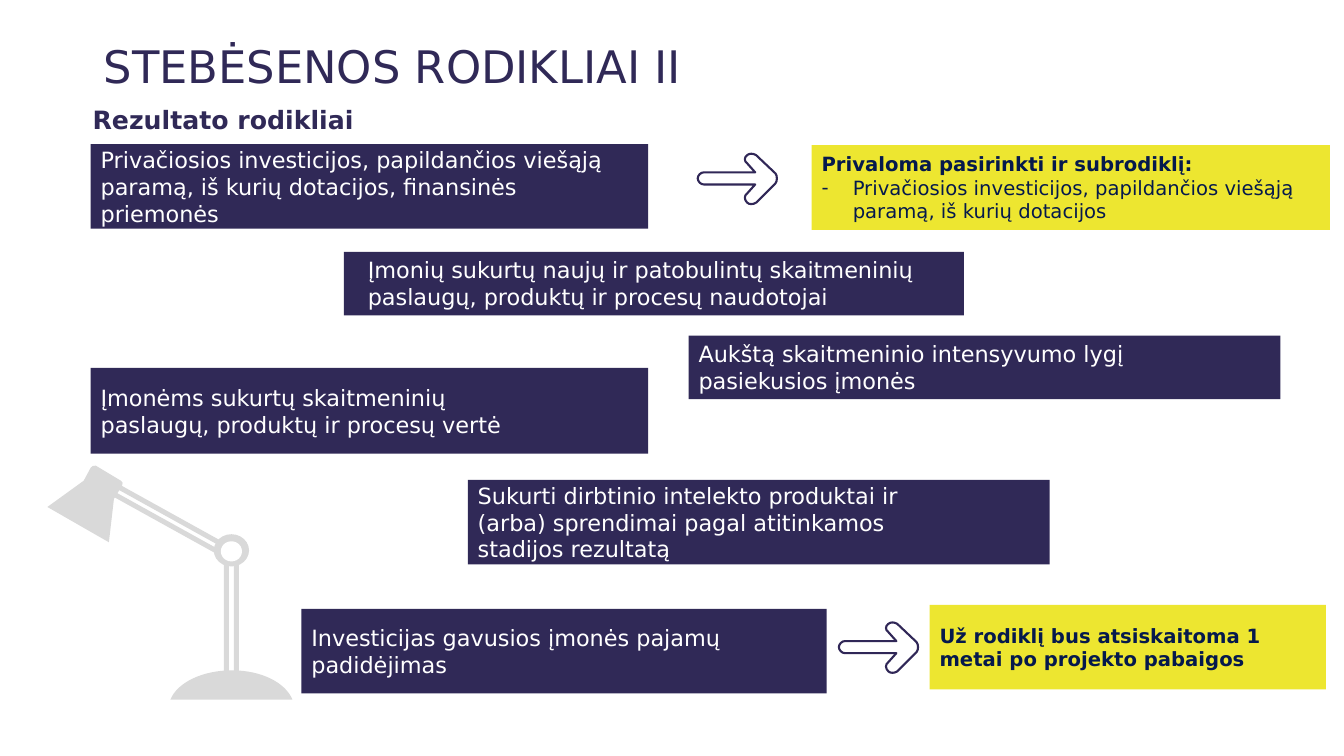
from pptx import Presentation
from pptx.dml.color import RGBColor
from pptx.enum.shapes import MSO_SHAPE
from pptx.enum.text import MSO_ANCHOR, PP_ALIGN
from pptx.oxml.ns import qn
from pptx.util import Inches, Pt
from lxml import etree

RECT, OVAL = MSO_SHAPE.RECTANGLE, MSO_SHAPE.OVAL
TOP, MIDDLE = MSO_ANCHOR.TOP, MSO_ANCHOR.MIDDLE
LEFT = PP_ALIGN.LEFT
NAVY = RGBColor(0x30, 0x29, 0x57)
ARROW_NAVY = RGBColor(0x30, 0x27, 0x57)
INK = RGBColor(0x05, 0x19, 0x4C)
YELLOW = RGBColor(0xED, 0xE6, 0x30)
GREY = RGBColor(0xD9, 0xD9, 0xD9)
WHITE = RGBColor(0xFF, 0xFF, 0xFF)
FONT = "DejaVu Sans"


def write(sp, lines, size, color, bold=False, anchor=MIDDLE, wrap=True):
    tf = sp.text_frame
    tf.text = "\n".join(lines)
    tf.word_wrap = wrap
    tf.vertical_anchor = anchor
    for p in tf.paragraphs:
        p.alignment = LEFT
        for r in p.runs:
            r.font.name, r.font.size, r.font.bold = FONT, Pt(size), bold
            r.font.color.rgb = color


def draw(shapes, steps, left=0, top=0):
    """Closed outline; a step of six numbers is a cubic curve."""
    points = [(Inches(left + step[i]), Inches(top + step[i + 1]))
              for step in steps for i in range(0, len(step), 2)]
    builder = shapes.build_freeform(*points[0])
    builder.add_line_segments(points[1:])
    sp = builder.convert_to_shape()
    sp.shadow.inherit = False
    # Join each curve's three points into one segment
    segments = iter(list(sp._element.iter(qn("a:lnTo"))))
    for step in steps[1:]:
        first = next(segments)
        if len(step) == 6:
            curve = etree.Element(qn("a:cubicBezTo"))
            first.addprevious(curve)
            for segment in (first, next(segments), next(segments)):
                curve.append(segment[0])
                segment.getparent().remove(segment)
    return sp


prs = Presentation()
prs.slide_width, prs.slide_height = Inches(13.33), Inches(7.5)
s = prs.slides.add_slide(prs.slide_layouts[6])

# Desk lamp: arms, stand and joint
lamp = s.shapes.add_group_shape()
for kind, x, y, w, h, angle, color in [
    (RECT, 1.72, 4.47, 0.05, 1.35, 299, GREY),
    (RECT, 1.67, 4.54, 0.05, 1.35, 299, GREY),
    (RECT, 2.32, 5.47, 0.05, 1.23, 0, GREY),
    (RECT, 2.22, 5.46, 0.05, 1.23, 0, GREY),
    (OVAL, 2.12, 5.30, 0.35, 0.32, 0, GREY),
    (OVAL, 2.19, 5.37, 0.21, 0.20, 0, WHITE),
]:
    sp = lamp.shapes.add_shape(kind, Inches(x), Inches(y), Inches(w), Inches(h))
    sp.rotation = angle
    sp.shadow.inherit = False
    sp.fill.solid()
    sp.fill.fore_color.rgb = color
    sp.line.fill.background()

# Desk lamp: base and shade
base = [(2.3, 6.65), (2.01, 6.65, 1.76, 6.77, 1.69, 6.94), (2.9, 6.94),
        (2.83, 6.77, 2.59, 6.65, 2.3, 6.65)]
shade = [(1.2, 4.77), (0.95, 4.62), (0.93, 4.62, 0.91, 4.62, 0.9, 4.64),
         (0.83, 4.77), (0.47, 5.03), (1.08, 5.38), (1.13, 4.95), (1.21, 4.82),
         (1.22, 4.8, 1.22, 4.78, 1.2, 4.77)]
for steps in (base, shade):
    sp = draw(lamp.shapes, steps)
    sp.fill.solid()
    sp.fill.fore_color.rgb = GREY
    sp.line.fill.background()

# Indicator boxes
for x, y, w, h, fill, lines in [
    (3.41, 2.5, 6.15, 0.63, NAVY, []),
    (6.83, 3.33, 5.87, 0.63, NAVY,
     ["Aukštą skaitmeninio intensyvumo lygį", "pasiekusios įmonės"]),
    (0.9, 3.65, 5.53, 0.85, NAVY,
     ["Įmonėms sukurtų skaitmeninių", "paslaugų, produktų ir procesų vertė"]),
    (2.99, 6.04, 5.21, 0.84, NAVY,
     ["Investicijas gavusios įmonės pajamų", "padidėjimas"]),
    (4.64, 4.76, 5.77, 0.84, NAVY,
     ["Sukurti dirbtinio intelekto produktai ir",
      "(arba) sprendimai pagal atitinkamos", "stadijos rezultatą"]),
    (9.22, 6, 3.93, 0.84, YELLOW,
     ["Už rodiklį bus atsiskaitoma 1 metai po projekto pabaigos"]),
    (0.9, 1.43, 5.53, 0.84, NAVY,
     ["Privačiosios investicijos, papildančios viešąją paramą, iš kurių dotacijos, "
      "finansinės priemonės"]),
    (8.05, 1.44, 5.14, 0.84, YELLOW,
     ["Privaloma pasirinkti ir subrodiklį:",
      "Privačiosios investicijos, papildančios viešąją paramą, iš kurių dotacijos"]),
]:
    sp = s.shapes.add_shape(RECT, Inches(x), Inches(y), Inches(w), Inches(h))
    sp.shadow.inherit = False
    sp.fill.solid()
    sp.fill.fore_color.rgb = fill
    sp.line.fill.background()
    if fill == YELLOW:
        write(sp, lines, 14, INK, bold=True)
    elif lines:
        write(sp, lines, 16, WHITE)

# Dash bullet in the last box
p = sp.text_frame.paragraphs[1]
pPr = p._p.get_or_add_pPr()
pPr.set("marL", str(Inches(0.31)))
pPr.set("indent", str(-Inches(0.31)))
etree.SubElement(pPr, qn("a:buFont")).set("typeface", FONT)
etree.SubElement(pPr, qn("a:buChar")).set("char", "-")
p.runs[0].font.bold = False

# Headings and the text over the users box
title = s.shapes.add_textbox(Inches(0.93), Inches(0.16), Inches(7.34), Inches(0.99))
write(title, ["STEBĖSENOS RODIKLIAI II"], 32, NAVY)
subtitle = s.shapes.add_textbox(Inches(0.82), Inches(0.99), Inches(2.8), Inches(0.4))
write(subtitle, ["Rezultato rodikliai"], 18, NAVY, bold=True, anchor=TOP, wrap=False)
users = s.shapes.add_textbox(Inches(3.55), Inches(2.49), Inches(5.87), Inches(0.64))
write(users, ["Įmonių sukurtų naujų ir patobulintų skaitmeninių paslaugų, produktų ir "
              "procesų naudotojai"], 16, WHITE, anchor=TOP)

# Outlined arrows
arrow = [(0, 0.25), (0, 0.22, 0.03, 0.19, 0.06, 0.19), (0.57, 0.19), (0.49, 0.1),
         (0.46, 0.08, 0.46, 0.04, 0.49, 0.02), (0.51, 0, 0.55, 0, 0.58, 0.02),
         (0.77, 0.2), (0.79, 0.22, 0.79, 0.28, 0.77, 0.3), (0.58, 0.49),
         (0.55, 0.51, 0.51, 0.51, 0.49, 0.49), (0.46, 0.46, 0.46, 0.42, 0.49, 0.4),
         (0.57, 0.31), (0.06, 0.31), (0.03, 0.31, 0, 0.28, 0, 0.25)]
for left, top in [(6.92, 1.52), (8.32, 6.17)]:
    sp = draw(s.shapes, arrow, left, top)
    sp.fill.background()
    sp.line.color.rgb = ARROW_NAVY
    sp.line.width = Pt(1.5)

prs.save("out.pptx")
